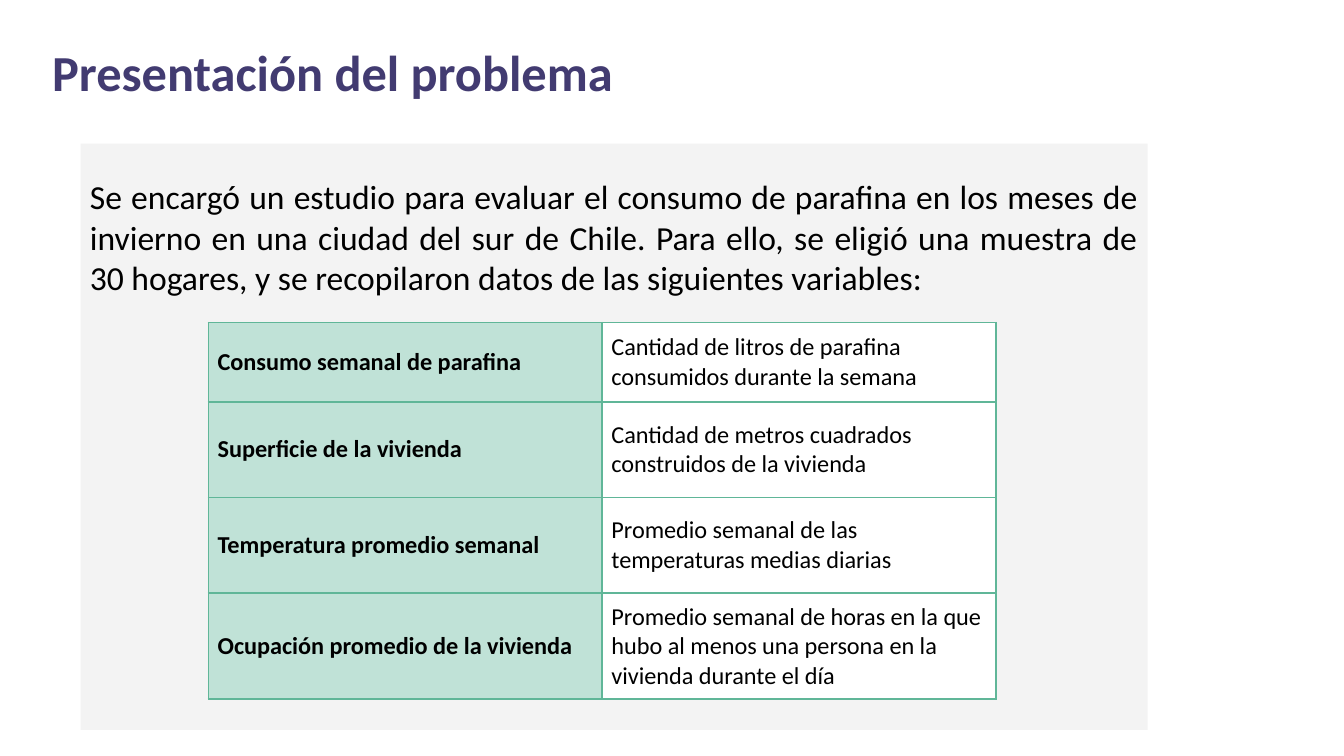
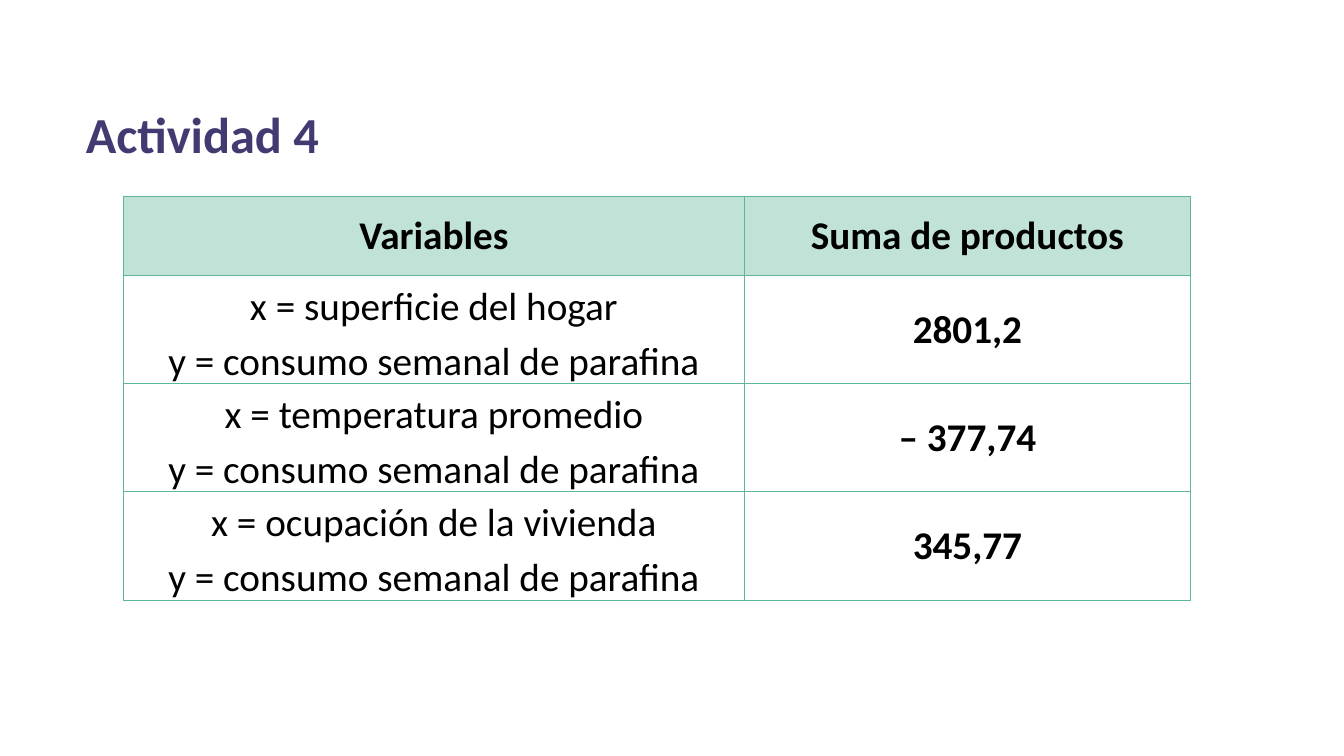
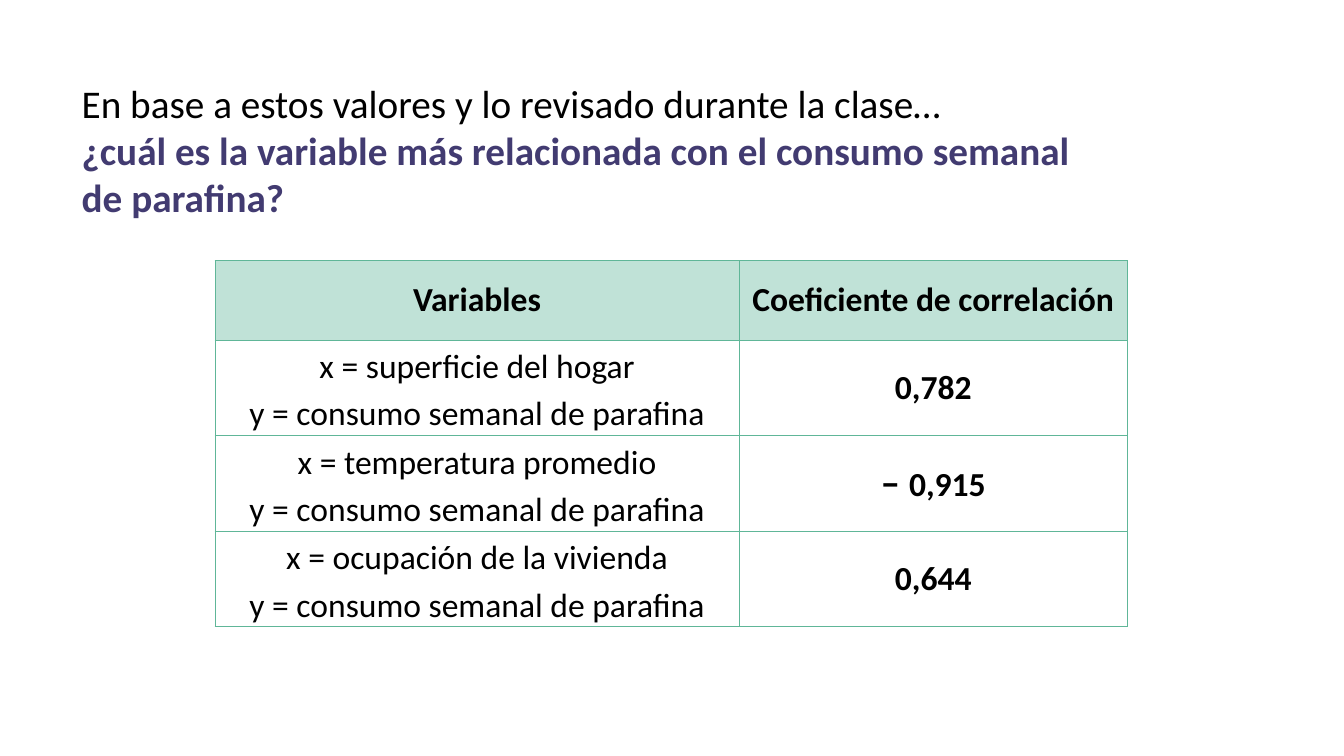
from pptx import Presentation
from pptx.dml.color import RGBColor
from pptx.enum.shapes import MSO_SHAPE
from pptx.enum.text import MSO_ANCHOR as ANCHOR, MSO_AUTO_SIZE as AUTO, PP_ALIGN as ALIGN
from pptx.oxml.ns import qn
from pptx.util import Pt
from lxml.etree import SubElement

PURPLE = RGBColor(0x42, 0x3B, 0x71)
GREEN = RGBColor(0x60, 0xB6, 0x98)
MINT = RGBColor(0xC0, 0xE2, 0xD7)
GREY = RGBColor(0xF3, 0xF3, 0xF3)
WHITE = RGBColor(0xFF, 0xFF, 0xFF)
BLACK = RGBColor(0, 0, 0)

BOLD = {"bold": True}
ACCENT = {"bold": True, "color": PURPLE}
HEADER_H, ROW_H = 42.5, 51.2

VARIABLES = [
    ("Consumo semanal de parafina",
     "Cantidad de litros de parafina consumidos durante la semana"),
    ("Superficie de la vivienda",
     "Cantidad de metros cuadrados construidos de la vivienda"),
    ("Temperatura promedio semanal",
     "Promedio semanal de las temperaturas medias diarias"),
    ("Ocupación promedio de la vivienda",
     "Promedio semanal de horas en la que hubo al menos una persona "
     "en la vivienda durante el día"),
]
X_NAMES = ["superficie del hogar", "temperatura promedio", "ocupación de la vivienda"]
Y_NAME = "consumo semanal de parafina"


class Deck:
    font = "Calibri"

    def __init__(self):
        self.prs = Presentation()
        self.prs.slide_width, self.prs.slide_height = Pt(720), Pt(405)
        self.s = None

    def new_slide(self):
        self.s = self.prs.slides.add_slide(self.prs.slide_layouts[6])
        fill = self.s.background.fill
        fill.solid()
        fill.fore_color.rgb = WHITE

    def add_text(self, tf, paragraphs, size, align=ALIGN.LEFT, spacing=None):
        """Fill tf; each paragraph is a list of (text, format) runs."""
        for i, runs in enumerate(paragraphs):
            p = tf.add_paragraph() if i else tf.paragraphs[0]
            p.alignment = align
            p.line_spacing = spacing
            for text, fmt in runs:
                r = p.add_run()
                r.text = text
                values = {"name": self.font, "size": size, "bold": False, "color": BLACK, **fmt}
                r.font.color.rgb = values.pop("color")
                values["size"] = Pt(values["size"])
                for key, value in values.items():
                    setattr(r.font, key, value)

    def frame(self, tf, x_inset, y_inset, **extra):
        values = {"word_wrap": True, "margin_left": Pt(x_inset), "margin_right": Pt(x_inset),
                  "margin_top": Pt(y_inset), "margin_bottom": Pt(y_inset), **extra}
        for key, value in values.items():
            setattr(tf, key, value)

    def textbox(self, x, y, w, h, paragraphs, size, insets):
        tf = self.s.shapes.add_textbox(Pt(x), Pt(y), Pt(w), Pt(h)).text_frame
        self.frame(tf, *insets, auto_size=AUTO.SHAPE_TO_FIT_TEXT)
        self.add_text(tf, paragraphs, size)

    def title(self, x, y, text):
        self.textbox(x, y, 482.4, 38.2, [[(text, ACCENT)]], 27, (5, 2.7))

    def panel(self, x, y, w, h, text):
        sp = self.s.shapes.add_shape(MSO_SHAPE.RECTANGLE, Pt(x), Pt(y), Pt(w), Pt(h))
        sp.shadow.inherit = False
        sp.fill.solid()
        sp.fill.fore_color.rgb = GREY
        sp.line.fill.background()
        self.frame(sp.text_frame, 5, 17.5, vertical_anchor=ANCHOR.TOP)
        self.add_text(sp.text_frame, [[(text, {})]], 18, ALIGN.JUSTIFY)

    def table(self, x, y, widths, n_rows):
        heights = [HEADER_H] + [ROW_H] * (n_rows - 1)
        tbl = self.s.shapes.add_table(n_rows, len(widths), Pt(x), Pt(y),
                                      Pt(sum(widths)), Pt(sum(heights))).table
        tbl.first_row = tbl.horz_banding = False
        for col, width in zip(tbl.columns, widths):
            col.width = Pt(width)
        for row, height in zip(tbl.rows, heights):
            row.height = Pt(height)
        return tbl

    def cell(self, cell, paragraphs, size, fill=None, border=0.5, y_inset=0, **style):
        for side in ("lnL", "lnR", "lnT", "lnB"):
            ln = SubElement(cell._tc.get_or_add_tcPr(), qn("a:" + side), w=str(Pt(border)))
            SubElement(SubElement(ln, qn("a:solidFill")), qn("a:srgbClr"), val=str(GREEN))
        if fill is None:
            cell.fill.background()
        else:
            cell.fill.solid()
            cell.fill.fore_color.rgb = fill
        cell.vertical_anchor = ANCHOR.MIDDLE
        self.frame(cell.text_frame, 5, y_inset)
        for side, inset in zip(("left", "right", "top", "bottom"), (5, 5, y_inset, y_inset)):
            setattr(cell, "margin_" + side, Pt(inset))
        self.add_text(cell.text_frame, paragraphs, size, **style)

    def description_table(self, x, y, widths, rows):
        tbl = self.table(x, y, widths, len(rows))
        for i, texts in enumerate(rows):
            for j, (text, fmt, fill) in enumerate(zip(texts, (BOLD, {}), (MINT, WHITE))):
                self.cell(tbl.cell(i, j), [[(text, fmt)]], 13, fill, border=1, y_inset=5)

    def result_table(self, x, y, widths, measure, results, size):
        """Pair each x variable with its result, given as a list of runs."""
        tbl = self.table(x, y, widths, len(results) + 1)
        for j, text in enumerate(("Variables", measure)):
            self.cell(tbl.cell(0, j), [[(text, BOLD)]], size, MINT, align=ALIGN.CENTER)
        for i, (x_name, runs) in enumerate(zip(X_NAMES, results), 1):
            pair = [[(f"x = {x_name}", {})], [(f"y = {Y_NAME}", {})]]
            self.cell(tbl.cell(i, 0), pair, size, align=ALIGN.CENTER, spacing=1.15)
            self.cell(tbl.cell(i, 1), [runs], size, align=ALIGN.CENTER)


def main():
    deck = Deck()

    deck.new_slide()
    deck.title(23, 19.5, "Presentación del problema")
    deck.panel(43.2, 77, 571.7, 314,
               "Se encargó un estudio para evaluar el consumo de parafina en los meses de "
               "invierno en una ciudad del sur de Chile. Para ello, se eligió una muestra de "
               "30 hogares, y se recopilaron datos de las siguientes variables:")
    deck.description_table(111.6, 172.8, (211, 211), VARIABLES)

    deck.new_slide()
    deck.result_table(66.2, 105.1, (332.6, 239), "Suma de productos",
                      [[(text, BOLD)] for text in ("2801,2", "– 377,74", "345,77")], 21)
    deck.title(41, 52.6, "Actividad 4")

    deck.new_slide()
    deck.result_table(115.2, 139.7, (280.8, 208), "Coeficiente de correlación",
                      [[("0,782", BOLD)],
                       [("– ", {**BOLD, "size": 21}), ("0,915", BOLD)],
                       [("0,644", BOLD)]], 18)
    deck.textbox(36.7, 35.3, 563.8, 90.7,
                 [[("En base a estos valores y lo revisado durante la clase…", {})],
                  [("¿cuál es la variable más relacionada con el consumo semanal de parafina?",
                    ACCENT)]], 21, (7.2, 7.2))

    deck.prs.save("out.pptx")


if __name__ == "__main__":
    main()
